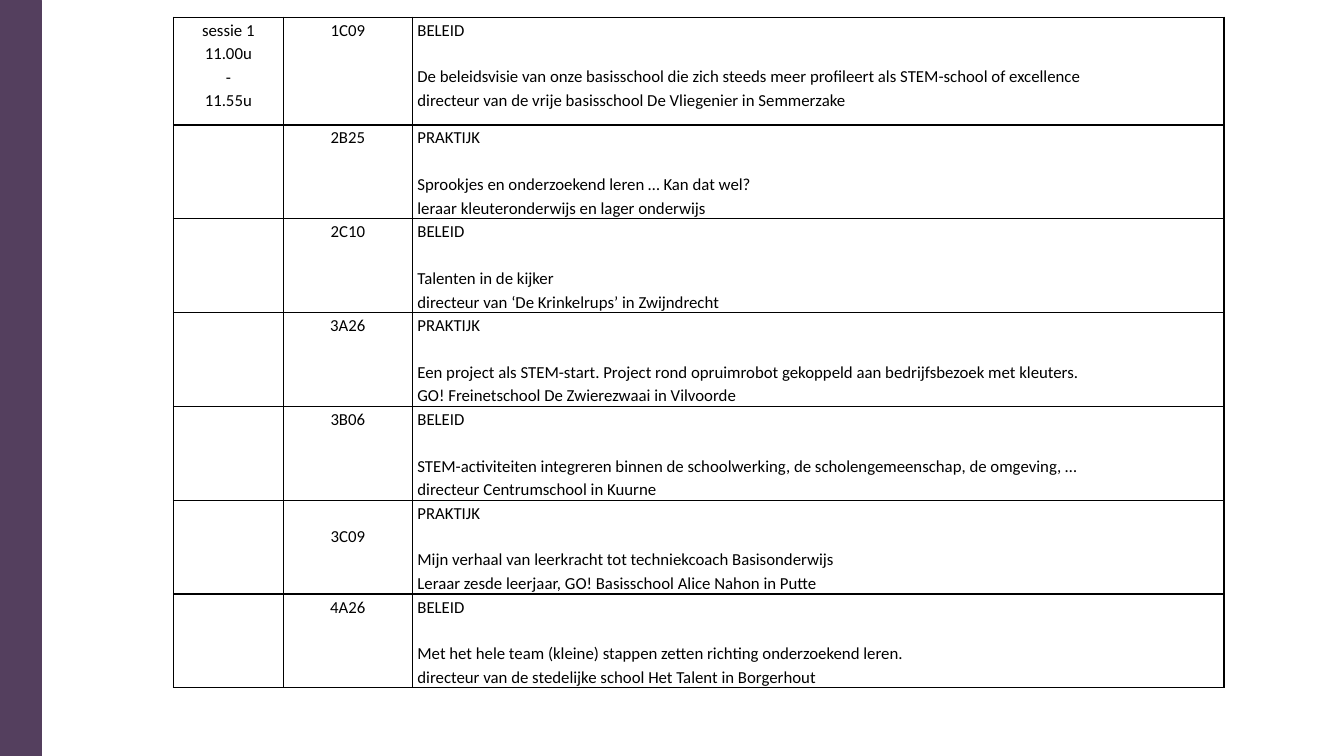
from lxml.etree import SubElement
from pptx import Presentation
from pptx.dml.color import RGBColor
from pptx.enum.shapes import MSO_SHAPE
from pptx.enum.text import PP_ALIGN
from pptx.oxml.ns import qn
from pptx.util import Inches, Pt

PURPLE = RGBColor(0x54, 0x3F, 0x5E)
BLACK = RGBColor(0, 0, 0)

LINE_HEIGHT = 0.23
COLUMN_WIDTHS = [1.09, 1.28, 8.05]
ROW_HEIGHTS = [1.07] + [0.93] * 6
CELL_MARGINS = {
    "margin_left": Inches(0.05),
    "margin_right": Inches(0.05),
    "margin_top": 0,
    "margin_bottom": 0,
}
FONT_FORMAT = {"name": "Calibri", "size": Pt(12), "bold": False}

SESSION = ["sessie 1", "11.00u", "-", "11.55u"]
TALKS = [
    ("1C09", "BELEID",
     "De beleidsvisie van onze basisschool die zich steeds meer profileert als STEM-school of excellence",
     "directeur van de vrije basisschool De Vliegenier in Semmerzake"),
    ("2B25", "PRAKTIJK",
     "Sprookjes en onderzoekend leren … Kan dat wel?",
     "leraar kleuteronderwijs en lager onderwijs"),
    ("2C10", "BELEID",
     "Talenten in de kijker",
     "directeur van ‘De Krinkelrups’ in Zwijndrecht"),
    ("3A26", "PRAKTIJK",
     "Een project als STEM-start. Project rond opruimrobot gekoppeld aan bedrijfsbezoek met kleuters.",
     "GO! Freinetschool De Zwierezwaai in Vilvoorde"),
    ("3B06", "BELEID",
     "STEM-activiteiten integreren binnen de schoolwerking, de scholengemeenschap, de omgeving, …",
     "directeur Centrumschool in Kuurne"),
    ("3C09", "PRAKTIJK",
     "Mijn verhaal van leerkracht tot techniekcoach Basisonderwijs",
     "Leraar zesde leerjaar, GO! Basisschool Alice Nahon in Putte"),
    ("4A26", "BELEID",
     "Met het hele team (kleine) stappen zetten richting onderzoekend leren.",
     "directeur van de stedelijke school Het Talent in Borgerhout"),
]


def add_borders(cell):
    """Draw a black one-point line on all four sides of the cell."""
    properties = cell._tc.get_or_add_tcPr()
    for side in ("a:lnL", "a:lnR", "a:lnT", "a:lnB"):
        line = SubElement(properties, qn(side), w=str(Pt(1)))
        fill = SubElement(line, qn("a:solidFill"))
        SubElement(fill, qn("a:srgbClr"), val=str(BLACK))


def fill_cell(cell, lines, alignment):
    for name, value in CELL_MARGINS.items():
        setattr(cell, name, value)
    add_borders(cell)
    cell.fill.background()
    cell.text = "\n".join(lines)
    for paragraph in cell.text_frame.paragraphs:
        paragraph.alignment = alignment
        paragraph.line_spacing = 1.15
        for name, value in FONT_FORMAT.items():
            setattr(paragraph.font, name, value)
        paragraph.font.color.rgb = BLACK


presentation = Presentation()
presentation.slide_width = Inches(13.33)
presentation.slide_height = Inches(7.5)
slide = presentation.slides.add_slide(presentation.slide_layouts[6])

side_band = slide.shapes.add_shape(
    MSO_SHAPE.RECTANGLE, 0, 0, Inches(0.41), presentation.slide_height)
side_band.shadow.inherit = False
side_band.fill.solid()
side_band.fill.fore_color.rgb = PURPLE
side_band.line.color.rgb = PURPLE
side_band.line.width = Pt(0.5)

table = slide.shapes.add_table(
    len(TALKS), len(COLUMN_WIDTHS), Inches(1.72), Inches(0.17),
    Inches(sum(COLUMN_WIDTHS)), Inches(sum(ROW_HEIGHTS))).table
table.first_row = False
table.horz_banding = False
for column, width in zip(table.columns, COLUMN_WIDTHS):
    column.width = Inches(width)
for row, height in zip(table.rows, ROW_HEIGHTS):
    row.height = Inches(height)

for index, (room, theme, title, speaker) in enumerate(TALKS):
    session_cell, room_cell, talk_cell = table.rows[index].cells
    fill_cell(session_cell, SESSION if index == 0 else [], PP_ALIGN.CENTER)
    fill_cell(room_cell, [room], PP_ALIGN.CENTER)
    fill_cell(talk_cell, [theme, title, speaker], PP_ALIGN.LEFT)
    talk_cell.text_frame.paragraphs[1].space_before = Inches(LINE_HEIGHT)
    if room == "3C09":
        room_cell.margin_top = Inches(LINE_HEIGHT)

presentation.save("out.pptx")
